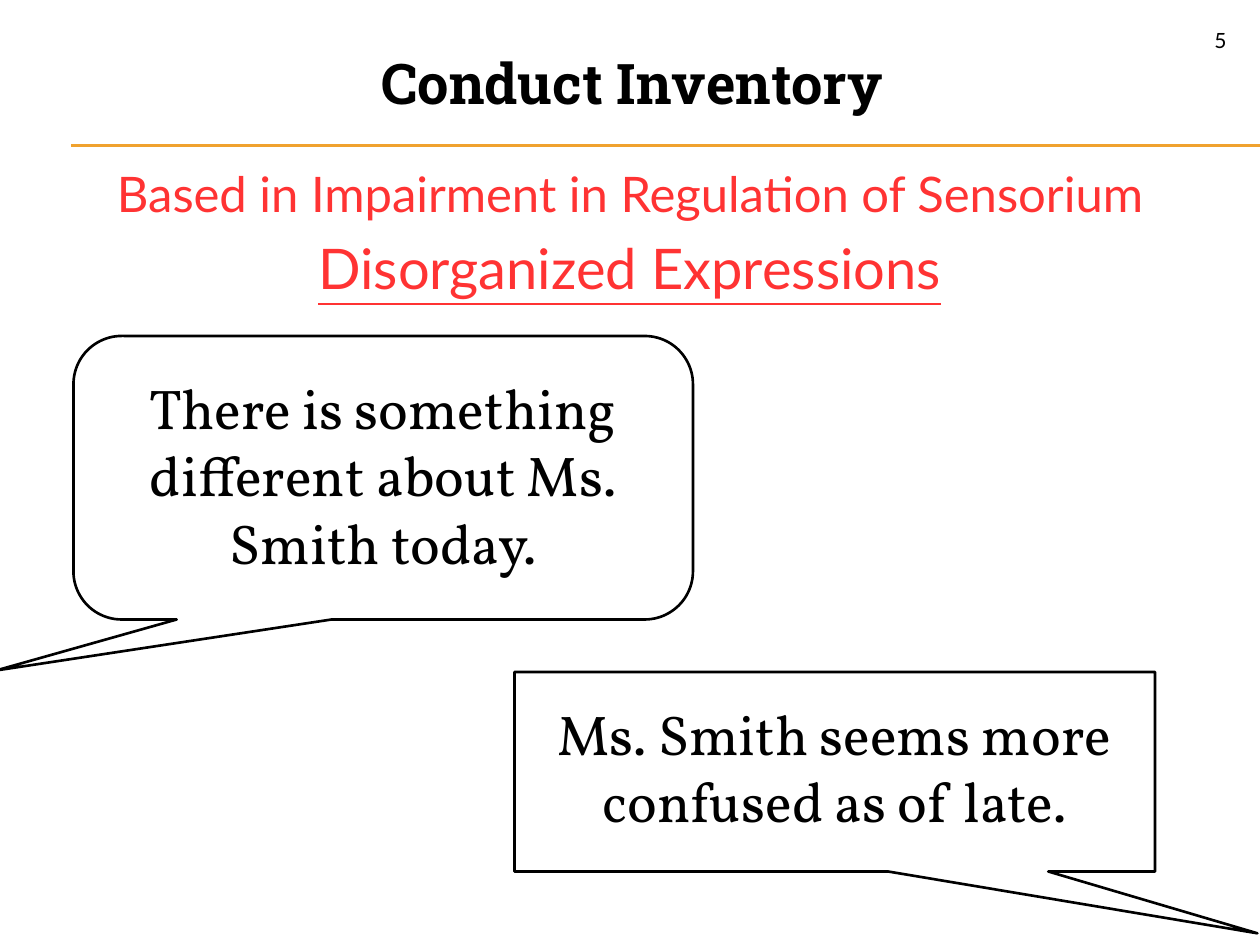
import pptx
import pptx.dml.color
import pptx.enum.shapes
import pptx.enum.text
import pptx.util
from dataclasses import dataclass
from lxml import etree

Pt = pptx.util.Pt
RGB = pptx.dml.color.RGBColor.from_string
ALIGN = pptx.enum.text.PP_ALIGN
SHAPE = pptx.enum.shapes.MSO_SHAPE


@dataclass(frozen=True)
class Theme:
    ink: str = "000000"
    paper: str = "FFFFFF"
    accent: str = "FF3333"
    rule: str = "F0A22E"
    title_font: str = "Roboto Slab"
    body_font: str = "Lato"
    quote_font: str = "Vollkorn"
    large: int = 32
    medium: int = 28
    small: int = 12


THEME = Theme()


def add_rule(slide, left, right, y):
    sp = slide.shapes.add_connector(
        pptx.enum.shapes.MSO_CONNECTOR.STRAIGHT, Pt(left), Pt(y), Pt(right), Pt(y))
    sp.line.color.rgb = RGB(THEME.rule)
    sp.line.width = Pt(0.75)
    etree.SubElement(sp._element.spPr, pptx.oxml.ns.qn("a:effectLst"))


def add_callout(slide, kind, box, adjustments):
    sp = slide.shapes.add_shape(kind, *map(Pt, box))
    sp.shadow.inherit = False
    sp.fill.solid()
    sp.fill.fore_color.rgb = RGB(THEME.paper)
    sp.line.color.rgb = RGB(THEME.ink)
    sp.line.width = Pt(1.5)
    for i, value in enumerate(adjustments):
        sp.adjustments[i] = value


def add_text(slide, box, lines, font, color, align=ALIGN.CENTER, bold=False):
    """Each line is (text, size, underlined); later lines get 20% space before."""
    tf = slide.shapes.add_textbox(*map(Pt, box)).text_frame
    tf.word_wrap = True
    for i, (text, size, underlined) in enumerate(lines):
        p = tf.add_paragraph() if i else tf.paragraphs[0]
        p.text = text
        p.alignment = align
        if i:
            p.space_before = Pt(0.2 * size)
        f = p.runs[0].font
        f.name, f.size, f.bold = font, Pt(size), bold
        f.underline = underlined
        f.color.rgb = RGB(color)


def main():
    prs = pptx.Presentation()
    prs.slide_width, prs.slide_height = Pt(720), Pt(540)
    slide = prs.slides.add_slide(prs.slide_layouts[6])

    # Double rule under the title
    for y in (82.8, 83.4):
        add_rule(slide, 40.5, 720, y)

    # Speech bubbles
    add_callout(slide, SHAPE.ROUNDED_RECTANGULAR_CALLOUT,
                (42, 192, 354, 162), (-0.625, 0.68, 0.17))
    add_callout(slide, SHAPE.RECTANGULAR_CALLOUT,
                (294, 384, 366, 114), (0.66, 0.81))

    # Quotes
    quotes = (
        ((54, 210, 330, 124), "There is something different about Ms. Smith today."),
        ((294, 396, 366, 85), "Ms. Smith seems more confused as of late."),
    )
    for box, quote in quotes:
        add_text(slide, box, [(quote, THEME.large, False)],
                 THEME.quote_font, THEME.ink)

    # Title, subtitle and page number
    add_text(slide, (19.5, 24, 684, 54), [("Conduct Inventory", THEME.large, False)],
             THEME.title_font, THEME.ink, bold=True)
    add_text(slide, (0, 90, 720, 78),
             [("Based in Impairment in Regulation of Sensorium", THEME.medium, False),
              ("Disorganized Expressions", THEME.large, True)],
             THEME.body_font, THEME.accent)
    add_text(slide, (648, 12, 60, 19.5), [("5", THEME.small, False)],
             THEME.body_font, THEME.ink, align=ALIGN.RIGHT)

    prs.save("out.pptx")


if __name__ == "__main__":
    main()
